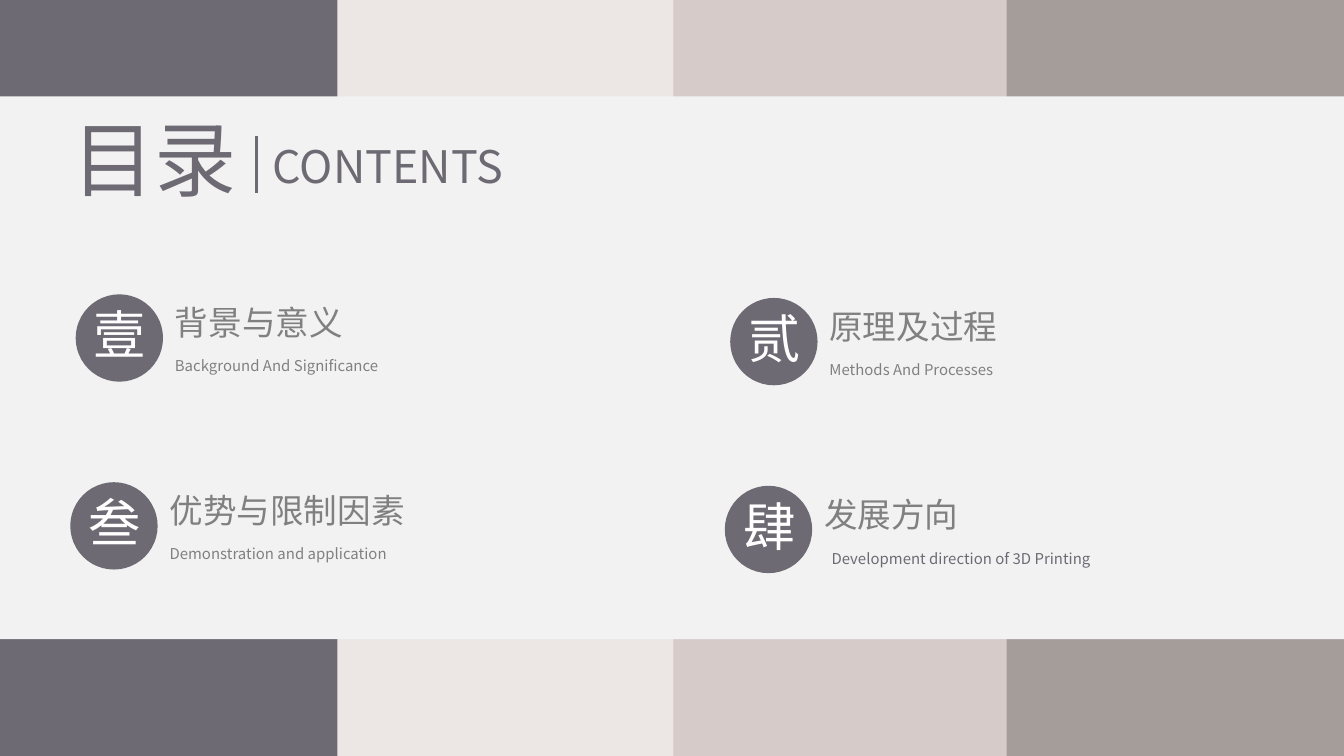
from dataclasses import dataclass

from lxml.etree import SubElement
from pptx import Presentation
from pptx.dml.color import RGBColor
from pptx.enum.shapes import MSO_CONNECTOR as Connector, MSO_SHAPE as Preset
from pptx.enum.text import MSO_AUTO_SIZE as AutoSize, PP_ALIGN as Align
from pptx.oxml.ns import qn
from pptx.util import Inches, Pt

FONT = "Noto Sans CJK SC"
COLOURS = {
    "slate": "6D6A73",
    "cream": "ECE7E4",
    "rose": "D6CBC9",
    "taupe": "A59D9A",
    "panel": "F2F2F2",
    "grey": "808080",
    "white": "FFFFFF",
}
SLIDE_WIDTH = Inches(10)
SLIDE_HEIGHT = SLIDE_WIDTH * 9 // 16
CELL = SLIDE_WIDTH / 100
ROWS = SLIDE_HEIGHT / CELL
BAND_COLUMNS = 25.1
BANDS = {"rose": 50, "taupe": 100 - BAND_COLUMNS, "cream": 25, "slate": 0}


@dataclass(frozen=True)
class Box:
    column: float
    row: float
    columns: float
    rows: float

    def shifted(self, column: float, row: float) -> "Box":
        return Box(self.column + column, self.row + row, self.columns, self.rows)

    def lengths(self) -> tuple[int, ...]:
        return tuple(cells(n) for n in (self.column, self.row, self.columns, self.rows))


@dataclass(frozen=True)
class Style:
    size: float
    colour: str
    align: Align = Align.LEFT


@dataclass(frozen=True)
class Chapter:
    numeral: str
    title: str
    title_columns: float
    subtitle: str
    subtitle_box: Box
    subtitle_style: Style


SUBTITLE = Style(8, "grey")
CHAPTERS = (
    Chapter("壹", "背景与意义", 14.6, "Background And Significance",
            Box(6.4, 4.15, 18.5, 2.4), SUBTITLE),
    Chapter("贰", "原理及过程", 14.6, "Methods And Processes",
            Box(6.4, 4.15, 14.9, 2.4), SUBTITLE),
    Chapter("叁", "优势与限制因素", 19.7, "Demonstration and application",
            Box(6.4, 4.15, 20.1, 2.4), SUBTITLE),
    Chapter("肆", "发展方向", 12.1, "Development direction of 3D Printing",
            Box(6.6, 4.25, 22, 2.4), Style(8, "slate", Align.CENTER)),
)


def cells(count: float) -> int:
    return round(count * CELL)


def colour(name: str) -> RGBColor:
    return RGBColor.from_string(COLOURS[name])


def add_filled(shapes, preset: Preset, box: Box, fill: str) -> None:
    shape = shapes.add_shape(preset, *box.lengths())
    shape.shadow.inherit = False
    shape.fill.solid()
    shape.fill.fore_color.rgb = colour(fill)
    shape.line.fill.background()


def add_text(shapes, box: Box, text: str, style: Style) -> None:
    frame = shapes.add_textbox(*box.lengths()).text_frame
    frame.word_wrap = False
    frame.auto_size = AutoSize.SHAPE_TO_FIT_TEXT
    paragraph = frame.paragraphs[0]
    paragraph.alignment = style.align
    run = paragraph.add_run()
    run.text = text
    run.font.size = Pt(style.size)
    run.font.color.rgb = colour(style.colour)
    run.font.name = FONT
    SubElement(run.font._element, qn("a:ea")).set("typeface", FONT)


def add_divider(shapes, column: float, top: float, bottom: float) -> None:
    line = shapes.add_connector(
        Connector.STRAIGHT, cells(column), cells(top), cells(column), cells(bottom))
    line.line.color.rgb = colour("slate")
    line.line.width = Pt(1.5)
    SubElement(line._element.spPr, qn("a:effectLst"))


def add_background(shapes) -> None:
    group = shapes.add_group_shape().shapes
    for fill, column in BANDS.items():
        add_filled(group, Preset.RECTANGLE, Box(column, 0, BAND_COLUMNS, ROWS), fill)
    add_filled(shapes, Preset.RECTANGLE, Box(0, 7.17, 100, 40.4), "panel")


def add_chapter(shapes, chapter: Chapter, index: int) -> None:
    row, column = divmod(index, 2)
    origin = (5.63 + 48.7 * column - 0.4 * row, 21.9 + 0.27 * column + 13.98 * row)
    group = shapes.add_group_shape().shapes
    add_filled(group, Preset.OVAL, Box(0, 0, 6.5, 6.5).shifted(*origin), "slate")
    add_text(group, Box(6.4, 0.1, chapter.title_columns, 4).shifted(*origin),
             chapter.title, Style(18, "grey"))
    add_text(group, chapter.subtitle_box.shifted(*origin),
             chapter.subtitle, chapter.subtitle_style)
    add_text(group, Box(0.35, 0.1, 5.9, 5.7).shifted(*origin),
             chapter.numeral, Style(28, "white", Align.CENTER))


def main() -> None:
    presentation = Presentation()
    presentation.slide_width, presentation.slide_height = SLIDE_WIDTH, SLIDE_HEIGHT
    shapes = presentation.slides.add_slide(presentation.slide_layouts[6]).shapes
    add_background(shapes)
    for index, chapter in enumerate(CHAPTERS):
        add_chapter(shapes, chapter, index)
    add_text(shapes, Box(4.3, 7.6, 14.4, 8.4), "目录", Style(44, "slate", Align.CENTER))
    add_divider(shapes, 19.1, 10.1, 14.4)
    add_text(shapes, Box(19.1, 9.8, 19.5, 5), "CONTENTS", Style(24, "slate", Align.CENTER))
    presentation.save("out.pptx")


if __name__ == "__main__":
    main()
